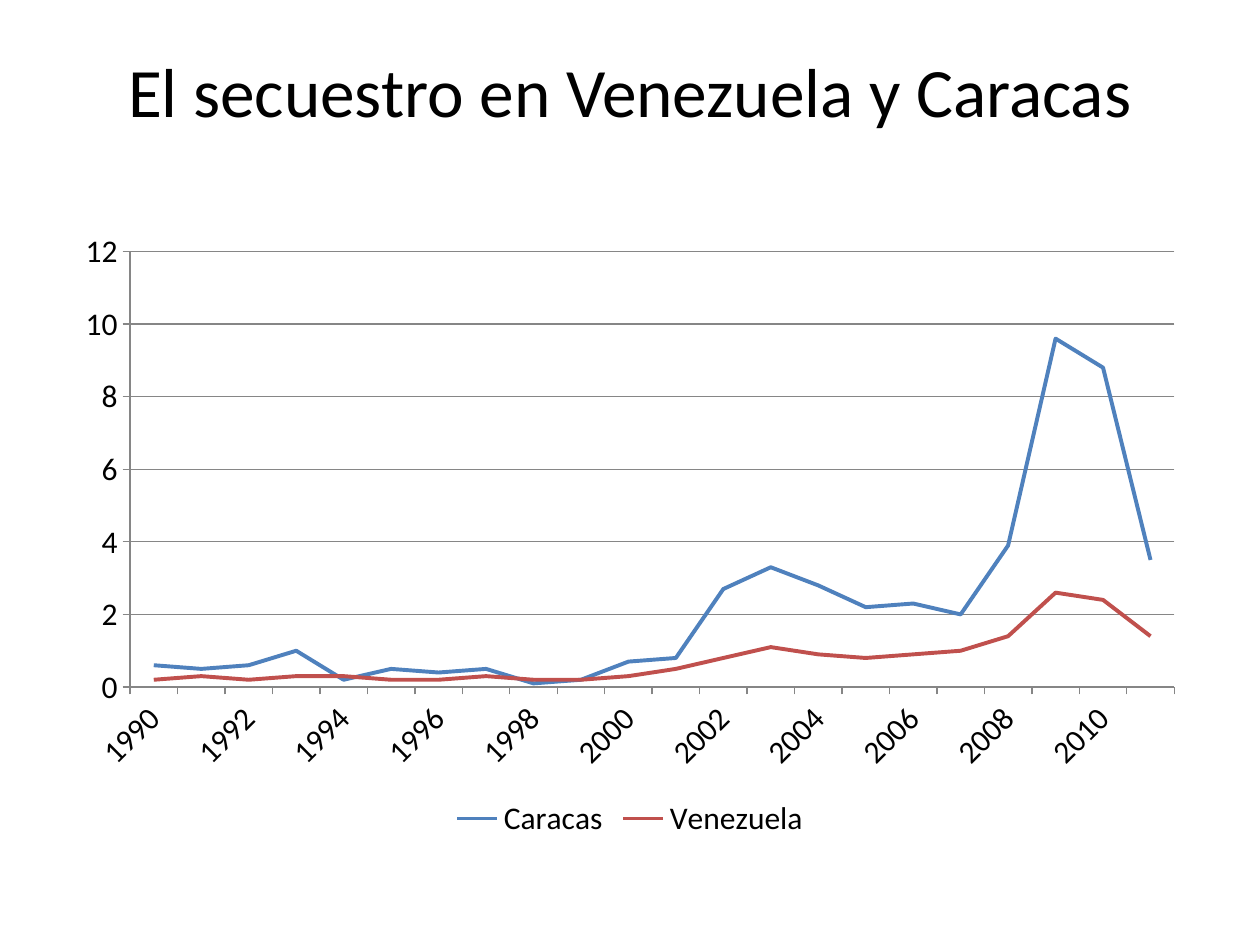
from pptx import Presentation
from pptx import util as u
from pptx.chart.data import CategoryChartData
from pptx.dml.color import RGBColor
from pptx.enum import chart as ch, text

PX = u.Inches(10) / 1260
FONT = "Calibri"
COLORS = {"text": "000000", "axis": "868686",
          "Caracas": "4F81BD", "Venezuela": "C0504D"}
RATES = {
    "Caracas": [0.6, 0.5, 0.6, 1, 0.2, 0.5, 0.4, 0.5, 0.1, 0.2, 0.7,
                0.8, 2.7, 3.3, 2.8, 2.2, 2.3, 2, 3.9, 9.6, 8.8, 3.5],
    "Venezuela": [0.2, 0.3, 0.2, 0.3, 0.3, 0.2, 0.2, 0.3, 0.2, 0.2, 0.3,
                  0.5, 0.8, 1.1, 0.9, 0.8, 0.9, 1, 1.4, 2.6, 2.4, 1.4],
}


def box(*lengths):
    return [u.Emu(round(n * PX)) for n in lengths]


def style_line(line, color, width):
    line.color.rgb = RGBColor.from_string(COLORS[color])
    line.width = u.Pt(width)


prs = Presentation()
prs.slide_width, prs.slide_height = box(1260, 945)
slide = prs.slides.add_slide(prs.slide_layouts[5])

# Title
title = slide.shapes.title
title.left, title.top, title.width, title.height = box(63, 38, 1134, 157)
tf = title.text_frame
tf.text = "El secuestro en Venezuela y Caracas"
tf.vertical_anchor = text.MSO_ANCHOR.TOP
tf.margin_top = box(10)[0]
p = tf.paragraphs[0]
p.alignment = text.PP_ALIGN.CENTER
p.font.name = FONT
p.font.size = u.Pt(39.6)
p.font.color.rgb = RGBColor.from_string(COLORS["text"])

# Line chart
data = CategoryChartData()
data.categories = [str(year) for year in range(1990, 2012)]
for name, values in RATES.items():
    data.add_series(name, values)
chart = slide.shapes.add_chart(
    ch.XL_CHART_TYPE.LINE, *box(63, 220, 1134, 624), data).chart
chart.has_title = False
chart.font.name = FONT
chart.font.size = u.Pt(18)
chart.font.color.rgb = RGBColor.from_string(COLORS["text"])
chart.plots[0].vary_by_categories = False
for series in chart.plots[0].series:
    series.smooth = False
    series.marker.style = ch.XL_MARKER_STYLE.NONE
    style_line(series.format.line, series.name, 2.25)

# Axes and gridlines
for axis in (chart.category_axis, chart.value_axis):
    axis.major_tick_mark = ch.XL_TICK_MARK.OUTSIDE
    axis.minor_tick_mark = ch.XL_TICK_MARK.NONE
    style_line(axis.format.line, "axis", 0.75)
    axis.tick_labels.font.size = u.Pt(18)
chart.category_axis.has_major_gridlines = False
labels = chart.category_axis._element.txPr.bodyPr
labels.set("rot", "-2700000")
labels.set("vert", "horz")
value_axis = chart.value_axis
value_axis.minimum_scale, value_axis.maximum_scale = 0, 12
value_axis.major_unit = 2
value_axis.has_major_gridlines = True
style_line(value_axis.major_gridlines.format.line, "axis", 0.75)

# Legend
chart.has_legend = True
chart.legend.position = ch.XL_LEGEND_POSITION.BOTTOM
chart.legend.include_in_layout = False

prs.save("out.pptx")
